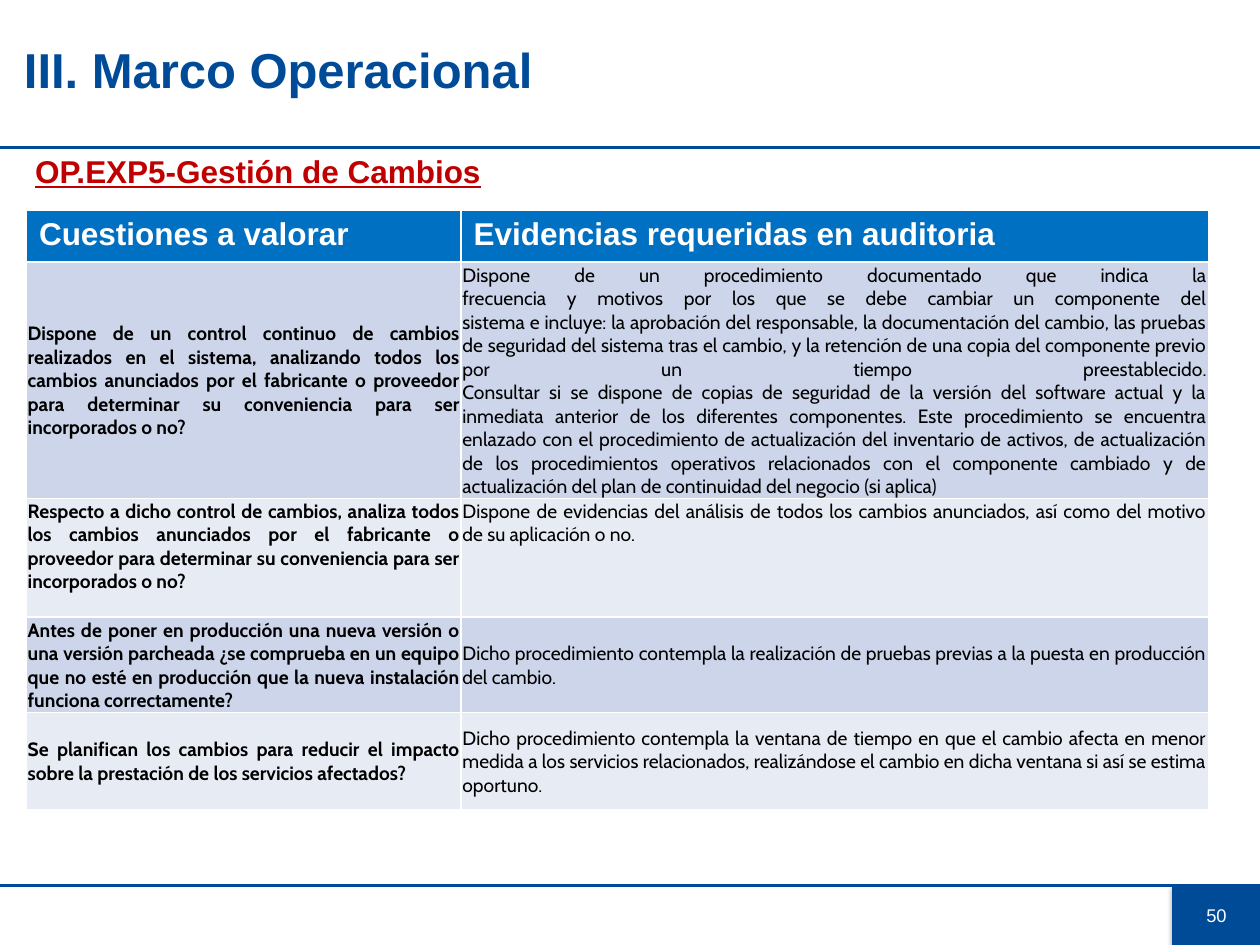
from lxml import etree
from pptx import Presentation
from pptx.dml.color import RGBColor
from pptx.enum.shapes import MSO_CONNECTOR, MSO_SHAPE
from pptx.enum.text import MSO_ANCHOR, PP_ALIGN
from pptx.oxml.ns import qn
from pptx.util import Inches, Pt

STRAIGHT, RECT = MSO_CONNECTOR.STRAIGHT, MSO_SHAPE.RECTANGLE
TOP, MIDDLE = MSO_ANCHOR.TOP, MSO_ANCHOR.MIDDLE
LEFT, CENTER, JUSTIFY = PP_ALIGN.LEFT, PP_ALIGN.CENTER, PP_ALIGN.JUSTIFY

COLORS = {
    "navy": "004B98",
    "header": "0070C2",
    "band_dark": "CCD5E9",
    "band_light": "E7EBF4",
    "red": "C00000",
    "white": "FFFFFF",
    "black": "000000",
}

TITLE = "III. Marco Operacional"
SUBTITLE = "OP.EXP5-Gestión de Cambios"
PAGE_NUMBER = "50"
HEADERS = ("Cuestiones a valorar", "Evidencias requeridas en auditoria")
QUESTIONS = [
    (
        "Dispone de un control continuo de cambios realizados en el sistema, analizando todos los cambios anunciados por el fabricante o proveedor para determinar su conveniencia para ser incorporados o no?",
        "Dispone de un procedimiento documentado que indica la\n"
        "frecuencia y motivos por los que se debe cambiar un componente del\n"
        "sistema e incluye: la aprobación del responsable, la documentación del cambio, las pruebas de seguridad del sistema tras el cambio, y la retención de una copia del componente previo por un tiempo preestablecido.\n"
        "Consultar si se dispone de copias de seguridad de la versión del software actual y la inmediata anterior de los diferentes componentes. Este procedimiento se encuentra enlazado con el procedimiento de actualización del inventario de activos, de actualización de los procedimientos operativos relacionados con el componente cambiado y de actualización del plan de continuidad del negocio (si aplica)",
        MIDDLE,
    ),
    (
        "Respecto a dicho control de cambios, analiza todos los cambios anunciados por el fabricante o proveedor para determinar su conveniencia para ser incorporados o no?",
        "Dispone de evidencias del análisis de todos los cambios anunciados, así como del motivo de su aplicación o no.",
        TOP,
    ),
    (
        "Antes de poner en producción una nueva versión o una versión parcheada ¿se comprueba en un equipo que no esté en producción que la nueva instalación funciona correctamente?",
        "Dicho procedimiento contempla la realización de pruebas previas a la puesta en producción del cambio.",
        MIDDLE,
    ),
    (
        "Se planifican los cambios para reducir el impacto sobre la prestación de los servicios afectados?",
        "Dicho procedimiento contempla la ventana de tiempo en que el cambio afecta en menor medida a los servicios relacionados, realizándose el cambio en dicha ventana si así se estima oportuno.",
        MIDDLE,
    ),
]
COL_WIDTHS = (3.45, 5.93)
ROW_HEIGHTS = (0.41, 1.87, 0.94, 0.76, 0.77)
RULES_Y = (1.17, 7.03)


def rgb(name):
    return RGBColor.from_string(COLORS[name])


def write(tf, text, size, color, bold=False, font="Arial", align=LEFT):
    p = tf.paragraphs[0]
    p.text = text
    p.alignment = align
    for r in p.runs:
        r.font.size = Pt(size)
        r.font.name = font
        r.font.bold = bold
        r.font.color.rgb = rgb(color)
    return p


def add_rule(s, y):
    line = s.shapes.add_connector(STRAIGHT, 0, Inches(y), Inches(10), Inches(y))
    line.line.color.rgb = rgb("navy")
    line.line.width = Pt(1.5)
    etree.SubElement(line._element.spPr, qn("a:effectLst"))


def add_page_number(s):
    sp = s.shapes.add_shape(RECT, Inches(9.31), Inches(7.03), Inches(0.69), Inches(0.47))
    sp.fill.solid()
    sp.fill.fore_color.rgb = rgb("navy")
    sp.line.color.rgb = rgb("navy")
    sp.line.width = Pt(0.75)
    sp.shadow.inherit = False
    effects = sp._element.spPr.find(qn("a:effectLst"))
    shadow = etree.SubElement(effects, qn("a:outerShdw"), blurRad=str(Pt(3.1)),
                              dist=str(Pt(1.8)), dir="5400000", rotWithShape="0")
    color = etree.SubElement(shadow, qn("a:srgbClr"), val=COLORS["black"])
    etree.SubElement(color, qn("a:alpha"), val="35000")
    sp.text_frame.vertical_anchor = MIDDLE
    write(sp.text_frame, PAGE_NUMBER, 10.5, "white", align=CENTER)


def fill_cell(cell, color):
    cell.fill.solid()
    cell.fill.fore_color.rgb = rgb(color)


def add_questions(s):
    table = s.shapes.add_table(
        len(ROW_HEIGHTS), len(COL_WIDTHS), Inches(0.21), Inches(1.67),
        Inches(sum(COL_WIDTHS)), Inches(sum(ROW_HEIGHTS))).table
    for col, width in zip(table.columns, COL_WIDTHS):
        col.width = Inches(width)
    for row, height in zip(table.rows, ROW_HEIGHTS):
        row.height = Inches(height)
    for c, text in enumerate(HEADERS):
        cell = table.cell(0, c)
        fill_cell(cell, "header")
        write(cell.text_frame, text, 18, "white", bold=True)
    for i, (question, evidence, anchor) in enumerate(QUESTIONS):
        for c, text in enumerate((question, evidence)):
            cell = table.cell(i + 1, c)
            fill_cell(cell, "band_light" if i % 2 else "band_dark")
            cell.margin_left = cell.margin_right = cell.margin_top = Inches(0.01)
            cell.margin_bottom = 0
            cell.vertical_anchor = anchor
            write(cell.text_frame, text, 11, "black", c == 0, "Cabin", JUSTIFY)


def main():
    prs = Presentation()
    prs.slide_width, prs.slide_height = Inches(10), Inches(7.5)
    s = prs.slides.add_slide(prs.slide_layouts[5])

    title = s.shapes.title
    title.left, title.top = Inches(0.19), Inches(0)
    title.width, title.height = Inches(9.53), Inches(1.16)
    tf = title.text_frame
    tf.margin_left = tf.margin_right = 0
    tf.vertical_anchor = MIDDLE
    write(tf, TITLE, 28, "navy", bold=True).line_spacing = 0.9

    add_page_number(s)
    for y in RULES_Y:
        add_rule(s, y)
    add_questions(s)

    box = s.shapes.add_textbox(Inches(0.18), Inches(1.16), Inches(7.05), Inches(0.4))
    box.text_frame.word_wrap = True
    p = write(box.text_frame, SUBTITLE, 18, "red", bold=True)
    p.runs[0].font.underline = True

    prs.save("out.pptx")


if __name__ == "__main__":
    main()
